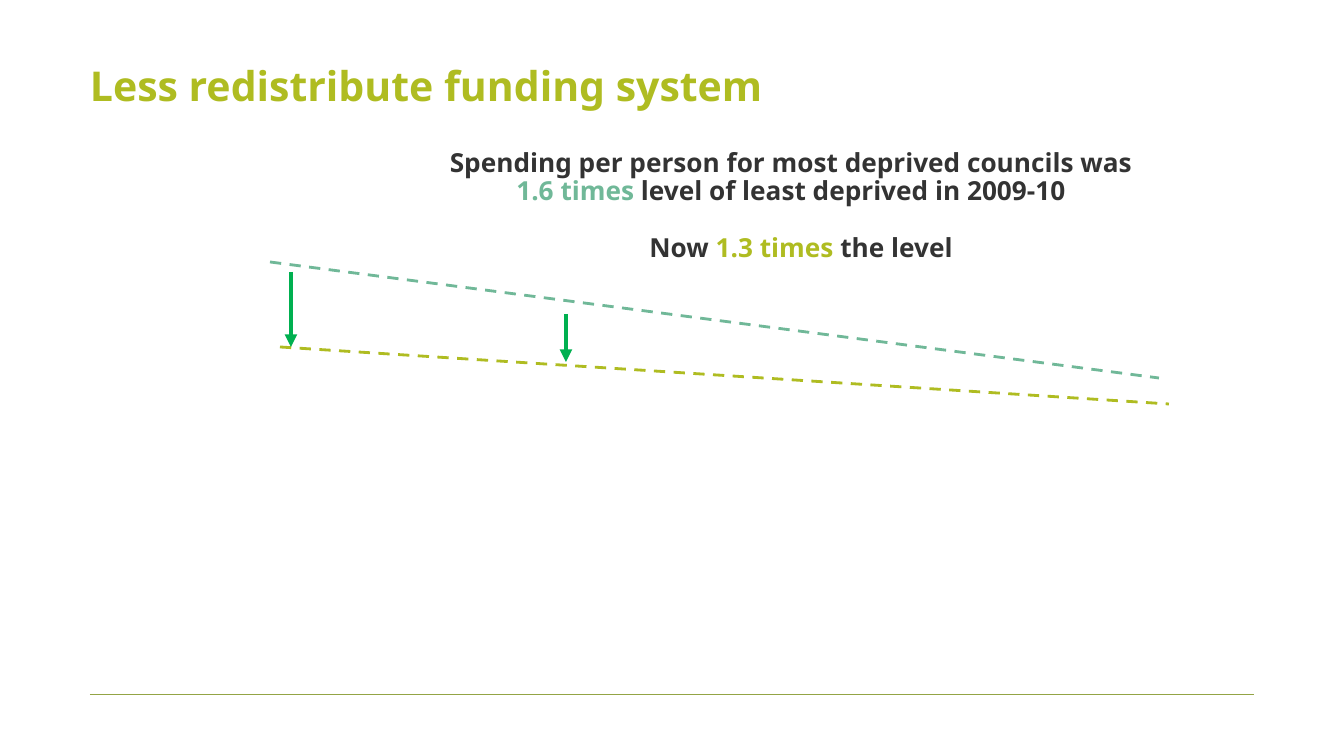
from lxml.etree import SubElement
from pptx import Presentation
from pptx.dml.color import RGBColor
from pptx.enum.dml import MSO_LINE
from pptx.enum.shapes import MSO_CONNECTOR
from pptx.enum.text import PP_ALIGN
from pptx.oxml.ns import qn
from pptx.util import Inches, Pt

FONT = "Noto Sans"
LIME = RGBColor(0xAF, 0xBC, 0x21)
TEAL = RGBColor(0x70, 0xB8, 0x98)
GREEN = RGBColor(0x00, 0xB0, 0x50)
OLIVE = RGBColor(0x93, 0xA4, 0x45)
DARK = RGBColor(0x33, 0x33, 0x33)

TITLE = [("Less redistribute funding system", LIME)]
THEN = [("Spending per person for most deprived councils was ", DARK),
        ("1.6 times ", TEAL),
        ("level of least deprived in 2009-10", DARK)]
NOW = [("Now ", DARK), ("1.3 times ", LIME), ("the level", DARK)]

# Lines in px: x1, y1, x2, y2
FOOTER_RULE = (90, 695, 1254, 695)
TRENDS = [((280, 347, 1169, 404), LIME), ((270, 262, 1159, 378), TEAL)]
DROPS = [(291, 272, 347), (566, 314, 362)]  # x, top, bottom


def px(n):
    return round(n * Inches(1) / 100.8)


def add_text(s, box, runs, size, align=PP_ALIGN.LEFT, inset=(0, 0)):
    tf = s.shapes.add_textbox(*map(px, box)).text_frame
    tf.word_wrap = True
    tf.margin_left = tf.margin_right = px(inset[0])
    tf.margin_top = tf.margin_bottom = px(inset[1])
    p = tf.paragraphs[0]
    p.alignment = align
    p.line_spacing = 0.9
    for text, color in runs:
        r = p.add_run()
        r.text = text
        r.font.name = FONT
        r.font.size = Pt(size)
        r.font.bold = True
        r.font.color.rgb = color


def add_line(s, ends, color, width, dash=None, arrow=False):
    c = s.shapes.add_connector(MSO_CONNECTOR.STRAIGHT, *map(px, ends))
    c.line.color.rgb = color
    c.line.width = Pt(width)
    if dash:
        c.line.dash_style = dash
    if arrow:
        SubElement(c.line._get_or_add_ln(), qn("a:tailEnd"), type="triangle")
    SubElement(c._element.spPr, qn("a:effectLst"))


def main():
    prs = Presentation()
    prs.slide_width, prs.slide_height = px(1344), px(756)
    s = prs.slides.add_slide(prs.slide_layouts[6])

    add_line(s, FOOTER_RULE, OLIVE, 0.75)
    add_text(s, (90, 66, 963, 101), TITLE, 29.3)
    for ends, color in TRENDS:
        add_line(s, ends, color, 2, dash=MSO_LINE.DASH)
    for x, top, bottom in DROPS:
        add_line(s, (x, top, x, bottom), GREEN, 3, arrow=True)
    for box, runs in [((418, 145, 746, 74), THEN), ((428, 230, 746, 42), NOW)]:
        add_text(s, box, runs, 18.7, align=PP_ALIGN.CENTER, inset=(10, 5))

    prs.save("out.pptx")


if __name__ == "__main__":
    main()
